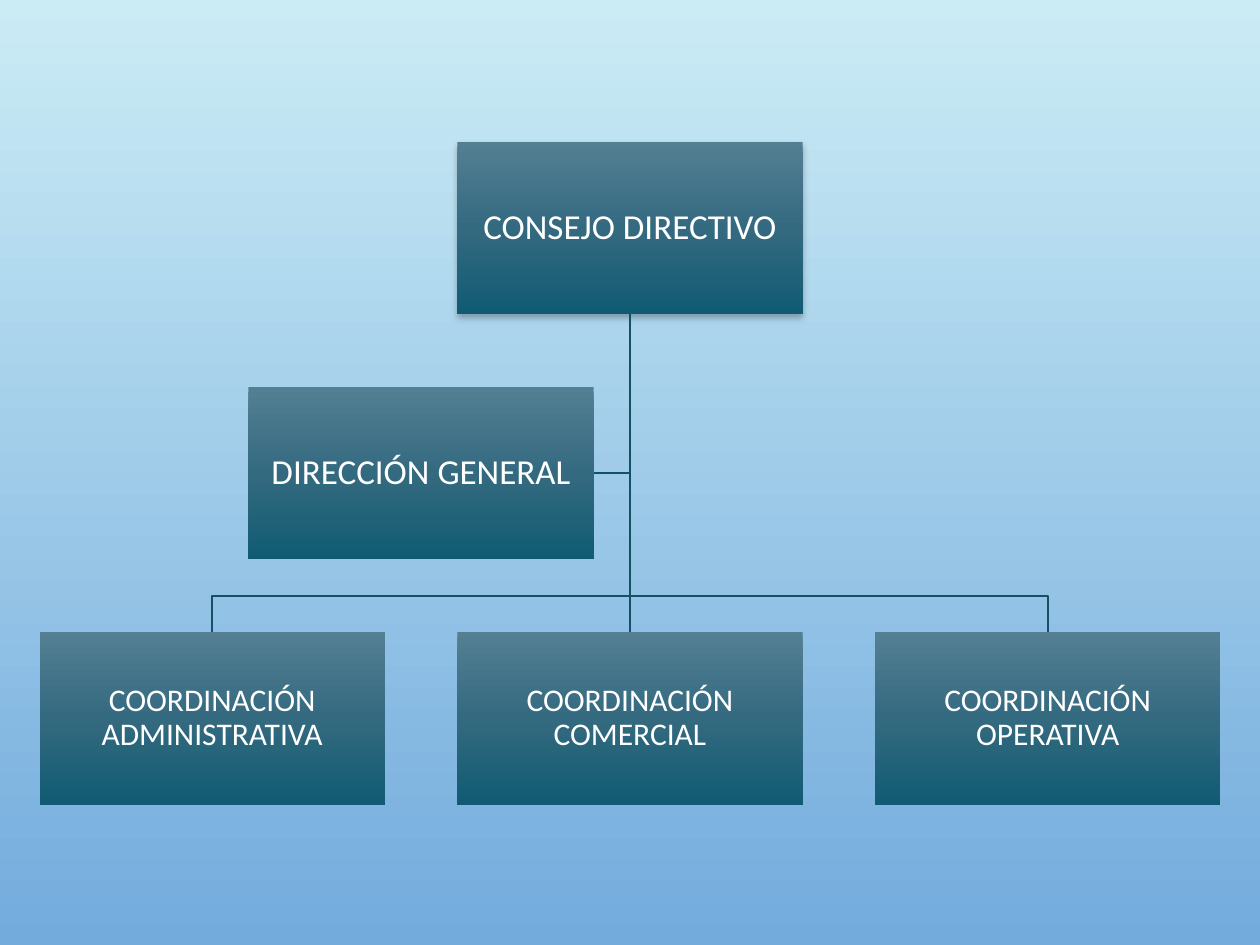
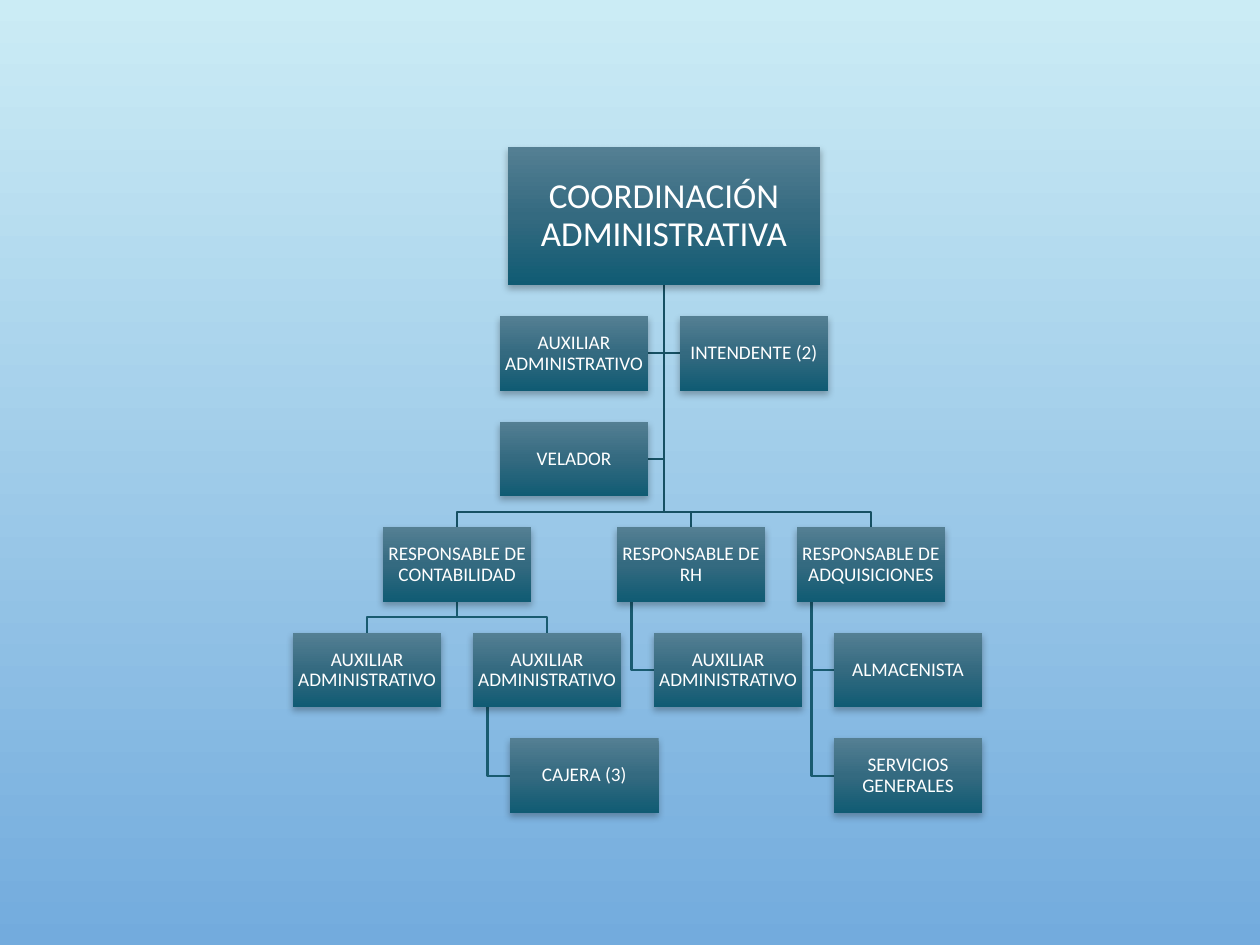
from copy import deepcopy
from dataclasses import dataclass

from pptx import Presentation
from pptx.dml.color import RGBColor
from pptx.enum.shapes import MSO_CONNECTOR, MSO_SHAPE
from pptx.enum.text import MSO_ANCHOR, PP_ALIGN
from pptx.oxml.ns import qn
from pptx.util import Inches, Pt
from lxml.etree import SubElement

# Shared look
SLIDE_WIDTH, SLIDE_HEIGHT = 10, 7.5
SKY = ["CBECF5", "73ABDD"]
TEAL = ["547F93", "346A80", "105B73"]
UPPER_LINE, LOWER_LINE = "165063", "195B70"
WHITE, BLACK = "FFFFFF", "000000"
FONT = "Calibri"
GAP = 0.21  # space between boxes, as a share of box width
HANG = 0.25  # shift of a hanging box, as a share of box width
STEM = 0.1  # place of the hanging line, as a share of parent width


@dataclass
class Box:
    text: str
    left: float
    top: float
    width: float
    height: float
    size: int
    shadow: bool = True

    @property
    def right(self):
        return self.left + self.width

    @property
    def bottom(self):
        return self.top + self.height

    @property
    def centre(self):
        return self.left + self.width / 2

    @property
    def middle(self):
        return self.top + self.height / 2


@dataclass
class Grid:
    """Columns count from the axis, rows from the top; boxes are half as high as wide."""
    axis: float
    top: float
    width: float

    def place(self, text, column, row, size, shadow=True):
        height, gap = self.width / 2, GAP * self.width
        left = self.axis + column * (self.width + gap) - self.width / 2
        return Box(text, left, self.top + row * (height + gap), self.width, height, size, shadow)

    def hang(self, text, parent, steps=1):
        left = parent.left + HANG * self.width
        top = parent.top + steps * (self.width / 2 + GAP * self.width)
        return Box(text, left, top, self.width, self.width / 2, parent.size)


def colour(code):
    return RGBColor.from_string(code)


def paint_gradient(fill, element, codes):
    fill.gradient()
    fill.gradient_angle = 270
    stop_list = element.find(".//" + qn("a:gsLst"))
    while len(stop_list) < len(codes):
        stop_list.append(deepcopy(stop_list[0]))
    for index, (stop, code) in enumerate(zip(fill.gradient_stops, codes)):
        stop.color.rgb = colour(code)
        stop.position = index / (len(codes) - 1)


def add_shadow(shape):
    effects = shape.element.spPr.find(qn("a:effectLst"))
    shadow = SubElement(effects, qn("a:outerShdw"), blurRad=str(Pt(4)), dist=str(Pt(2)),
                        dir="5400000", rotWithShape="0")
    tint = SubElement(shadow, qn("a:srgbClr"), val=BLACK)
    SubElement(tint, qn("a:alpha"), val="28000")


def draw_box(page, box):
    shape = page.shapes.add_shape(MSO_SHAPE.RECTANGLE, Inches(box.left), Inches(box.top),
                                  Inches(box.width), Inches(box.height))
    paint_gradient(shape.fill, shape.element, TEAL)
    shape.line.fill.background()
    shape.shadow.inherit = False
    if box.shadow:
        add_shadow(shape)
    frame = shape.text_frame
    frame.word_wrap = True
    frame.vertical_anchor = MSO_ANCHOR.MIDDLE
    frame.margin_left = frame.margin_right = Inches(0.01)
    frame.margin_top = frame.margin_bottom = Inches(0.01)
    para = frame.paragraphs[0]
    para.text = box.text
    para.alignment = PP_ALIGN.CENTER
    para.line_spacing = 0.9
    para.font.name, para.font.size = FONT, Pt(box.size)
    para.font.color.rgb = colour(WHITE)
    return shape


def style_line(shape, code):
    shape.line.color.rgb = colour(code)
    shape.line.width = Pt(1.25)


def draw_path(page, points, code):
    start, *rest = [(Inches(x), Inches(y)) for x, y in points]
    builder = page.shapes.build_freeform(*start)
    builder.add_line_segments(rest, close=False)
    shape = builder.convert_to_shape()
    shape.fill.background()
    shape.shadow.inherit = False
    style_line(shape, code)


def link_below(page, parent, child, code=UPPER_LINE):
    turn = child.top - GAP * child.width / 2
    draw_path(page, [(parent.centre, parent.bottom), (parent.centre, turn),
                     (child.centre, turn), (child.centre, child.top)], code)


def link_side(page, parent, child):
    edge = child.right if child.centre < parent.centre else child.left
    draw_path(page, [(parent.centre, parent.bottom), (parent.centre, child.middle),
                     (edge, child.middle)], UPPER_LINE)


def link_hanging(page, parent, child):
    stem = parent.left + STEM * parent.width
    draw_path(page, [(stem, parent.bottom), (stem, child.middle),
                     (child.left, child.middle)], LOWER_LINE)


def link_straight(page, upper, lower):
    line = page.shapes.add_connector(MSO_CONNECTOR.STRAIGHT, 0, 0, 0, 0)
    line.begin_connect(upper, 2)
    line.end_connect(lower, 0)
    style_line(line, UPPER_LINE)
    SubElement(line.element.spPr, qn("a:effectLst"))


def add_page(deck):
    page = deck.slides.add_slide(deck.slide_layouts[6])
    paint_gradient(page.background.fill, page.element, SKY)
    return page


def build_board(deck):
    page = add_page(deck)
    grid = Grid(axis=SLIDE_WIDTH / 2, top=0.15 * SLIDE_HEIGHT, width=2.74)
    council = grid.place("CONSEJO DIRECTIVO", 0, 0, 20)
    direction = grid.place("DIRECCIÓN GENERAL", -0.5, 1, 20, shadow=False)
    areas = ["ADMINISTRATIVA", "COMERCIAL", "OPERATIVA"]
    left, centre, right = [grid.place(f"COORDINACIÓN {area}", column, 2, 18, shadow=False)
                           for column, area in enumerate(areas, -1)]
    # Lines lie behind the boxes
    link_side(page, council, direction)
    for area in (left, right):
        link_below(page, council, area)
    shapes = [draw_box(page, box) for box in (council, left, centre, right, direction)]
    link_straight(page, shapes[0], shapes[2])


def build_administration(deck):
    page = add_page(deck)
    grid = Grid(axis=5.27, top=2.51, width=1.18)
    assistant = "AUXILIAR ADMINISTRATIVO"
    root = Box("COORDINACIÓN ADMINISTRATIVA", grid.axis - 1.24, 1.17, 2.48, 1.09, 20)

    # Staff beside the main line
    staff = [grid.place(text, column, row, 11) for text, column, row in
             [(assistant, -0.5, 0), ("INTENDENTE (2)", 0.5, 0), ("VELADOR", -0.5, 1)]]
    # Heads of area
    heads = [grid.place(f"RESPONSABLE DE {area}", column, 2, 11) for area, column in
             [("CONTABILIDAD", -1.15), ("RH", 0.15), ("ADQUISICIONES", 1.15)]]
    accounting, personnel, purchasing = heads
    # Teams under each head
    pair = [grid.place(assistant, column, 3, 11) for column in (-1.65, -0.65)]
    hanging = [(parent, grid.hang(text, parent, steps)) for text, parent, steps in
               [("CAJERA (3)", pair[1], 1), (assistant, personnel, 1),
                ("ALMACENISTA", purchasing, 1), ("SERVICIOS GENERALES", purchasing, 2)]]

    # Lines lie behind the boxes
    for box in staff:
        link_side(page, root, box)
    for box in heads:
        link_below(page, root, box)
    for box in pair:
        link_below(page, accounting, box, LOWER_LINE)
    for parent, box in hanging:
        link_hanging(page, parent, box)
    for box in [root, *heads, *pair, *(box for _, box in hanging), *staff]:
        draw_box(page, box)


def main():
    deck = Presentation()
    deck.slide_width, deck.slide_height = Inches(SLIDE_WIDTH), Inches(SLIDE_HEIGHT)
    build_board(deck)
    build_administration(deck)
    deck.save("out.pptx")


if __name__ == "__main__":
    main()
